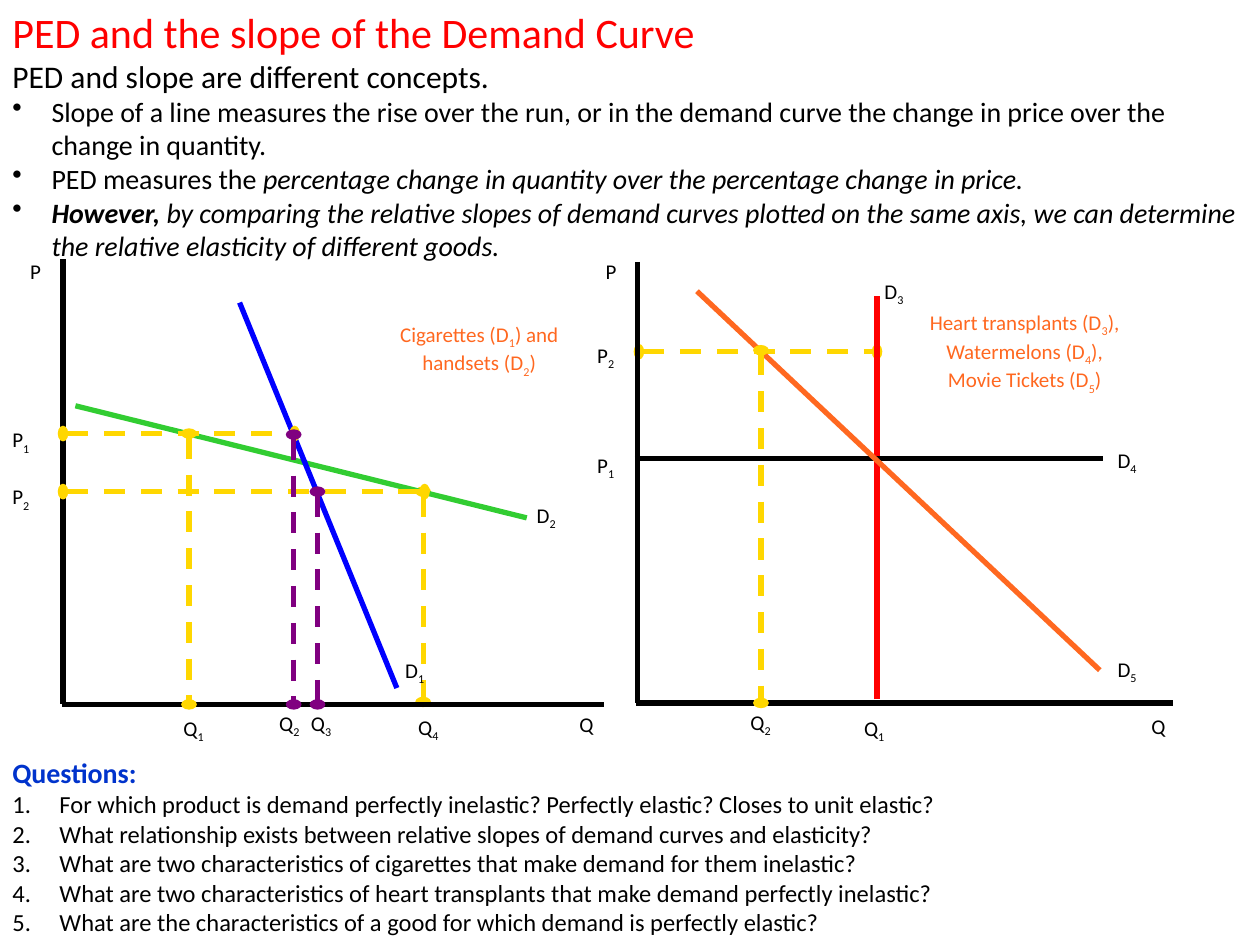
"""Build a slide on price elasticity and the slope of demand curves."""
from dataclasses import dataclass

from lxml.etree import SubElement
from pptx import Presentation
from pptx.dml.color import RGBColor
from pptx.enum.dml import MSO_LINE
from pptx.enum.shapes import MSO_CONNECTOR
from pptx.enum.text import MSO_AUTO_SIZE, PP_ALIGN
from pptx.oxml.ns import qn
from pptx.util import Cm, Pt


@dataclass(frozen=True)
class Theme:
    face: str = "Calibri"
    black: str = "000000"
    red: str = "FF0000"
    blue: str = "0000FF"
    navy: str = "0033CC"
    green: str = "32CD32"
    gold: str = "FFD700"
    purple: str = "800080"
    orange: str = "FF6820"
    title: int = 24
    lead: int = 18
    body: int = 16
    quiz: int = 14
    label: int = 12
    stroke: int = 3


T = Theme()

LEFT = dict(
    solid=[
        (1.27, 5.23, 1.27, 14.2, T.black),
        (1.24, 14.2, 12.17, 14.2, T.black),
        (1.52, 8.18, 10.62, 10.44, T.green),
        (4.83, 6.1, 8, 13.87, T.blue),
    ],
    dashed=[
        (8.53, 9.91, 8.53, 14.15, T.gold),
        (1.27, 8.74, 5.94, 8.74, T.gold),
        (3.81, 8.74, 3.81, 14.2, T.gold),
        (1.27, 9.91, 8.56, 9.91, T.gold),
        (5.92, 8.76, 5.92, 14.2, T.purple),
        (6.4, 9.91, 6.4, 14.2, T.purple),
    ],
    labels=[
        ("D_2", 10.57, 10.01), ("D_1", 7.92, 13.13),
        ("P_1", 0, 8.48), ("P_2", 0, 9.63), ("P", 0.36, 5.08),
        ("Q", 11.43, 14.22), ("Q_1", 3.45, 14.3), ("Q_2", 5.38, 14.2),
        ("Q_3", 6.02, 14.2), ("Q_4", 8.18, 14.27),
    ],
    goods=["Cigarettes (D_1) and handsets (D_2)"],
    box=(7.21, 6.35, 4.9, 1.6),
)

RIGHT = dict(
    solid=[
        (12.85, 5.28, 12.85, 14.17, T.black),
        (12.83, 14.17, 23.65, 14.17, T.black),
        (17.68, 14.1, 17.68, 5.97, T.red),
        (12.8, 9.25, 22.23, 9.25, T.black),
        (14.05, 5.87, 22.17, 13.51, T.orange),
    ],
    dashed=[
        (12.88, 7.09, 17.68, 7.09, T.gold),
        (15.34, 7.06, 15.34, 14.17, T.gold),
    ],
    labels=[
        ("D_4", 22.28, 8.89), ("D_5", 22.28, 13.11), ("D_3", 17.58, 5.49),
        ("P_1", 11.79, 8.99), ("P_2", 11.79, 6.78), ("P", 11.96, 5.08),
        ("Q", 22.96, 14.25), ("Q_1", 17.17, 14.3), ("Q_2", 14.88, 14.17),
    ],
    goods=["Heart transplants (D_3), Watermelons (D_4),", "Movie Tickets (D_5)"],
    box=(17.58, 6.12, 6.15, 1.75),
)

QUIZ = [
    "For which product is demand perfectly inelastic? Perfectly elastic? Closes to unit elastic?",
    "What relationship exists between relative slopes of demand curves and elasticity?",
    "What are two characteristics of cigarettes that make demand for them inelastic?",
    "What are two characteristics of heart transplants that make demand perfectly inelastic?",
    "What are the characteristics of a good for which demand is perfectly elastic?",
]


def add_line(shapes, x1, y1, x2, y2, hue, dashed=False):
    """Draw a plain line, or a dashed one with a dot at each end."""
    link = shapes.add_connector(
        MSO_CONNECTOR.STRAIGHT, Cm(x1), Cm(y1), Cm(x2), Cm(y2))
    link.line.color.rgb = RGBColor.from_string(hue)
    link.line.width = Pt(T.stroke)
    if dashed:
        link.line.dash_style = MSO_LINE.DASH
        stroke = link.line.color and link._element.spPr.find(qn("a:ln"))
        for end in ("a:headEnd", "a:tailEnd"):
            SubElement(stroke, qn(end), type="oval", w="med", len="sm")
    SubElement(link._element.spPr, qn("a:effectLst"))


def add_box(shapes, x, y, wide, high):
    """Add a wrapped text box and return its text frame."""
    frame = shapes.add_textbox(Cm(x), Cm(y), Cm(wide), Cm(high)).text_frame
    frame.word_wrap = True
    frame.auto_size = MSO_AUTO_SIZE.SHAPE_TO_FIT_TEXT
    return frame


def next_par(frame):
    """Return the first empty paragraph or a new one."""
    first = frame.paragraphs[0]
    return frame.add_paragraph() if first.runs else first


def style(par, size, hue, bold=None, slant=None):
    """Set the font of a whole paragraph."""
    font = par.font
    font.name, font.size, font.bold, font.italic = T.face, Pt(size), bold, slant
    font.color.rgb = RGBColor.from_string(hue)


def add_par(frame, text, size, hue, **look):
    """Add a paragraph whose underscores mark one-digit subscripts."""
    par = next_par(frame)
    head, *tails = text.split("_")
    par.add_run().text = head
    for tail in tails:
        sub = par.add_run()
        sub.text = tail[0]
        sub._r.get_or_add_rPr().set("baseline", "-25000")
        if tail[1:]:
            par.add_run().text = tail[1:]
    style(par, size, hue, **look)
    return par


def set_mark(par, indent, tag, **traits):
    """Give a paragraph a hanging bullet or number."""
    props = par._p.get_or_add_pPr()
    props.set("marL", str(Cm(indent)))
    props.set("indent", str(-Cm(indent)))
    mark = props.makeelement(qn(tag), traits)
    props.insert(0, mark)


def add_graph(slide, solid, dashed, labels, goods, box):
    """Draw one demand graph as a group."""
    shapes = slide.shapes.add_group_shape().shapes
    first, *rest = dashed
    add_line(shapes, *first, dashed=True)
    for line in solid:
        add_line(shapes, *line)
    for line in rest:
        add_line(shapes, *line, dashed=True)
    for text, x, y in labels:
        add_par(add_box(shapes, x, y, 1.5, 0.95), text, T.label, T.black)
    frame = add_box(shapes, *box)
    for text in goods:
        add_par(frame, text, T.label, T.orange).alignment = PP_ALIGN.CENTER


def add_intro(slide):
    """Write the title and the bullets on slope and elasticity."""
    frame = add_box(slide.shapes, 0, 0, 25.4, 5.46)
    add_par(frame, "PED and the slope of the Demand Curve", T.title, T.red)
    add_par(frame, "PED and slope are different concepts.", T.lead, T.black)
    points = [
        add_par(frame, "Slope of a line measures the rise over the run, or in the demand "
                "curve the change in price over the change in quantity.", T.body, T.black),
        add_par(frame, "PED measures the ", T.body, T.black),
        add_par(frame, "However, ", T.body, T.black, slant=True),
    ]
    ratio = points[1].add_run()
    ratio.text = "percentage change in quantity over the percentage change in price."
    ratio.font.italic = True
    points[2].runs[0].font.bold = True
    points[2].add_run().text = (
        "by comparing the relative slopes of demand curves plotted on the same axis, "
        "we can determine the relative elasticity of different goods.")
    for par in points:
        set_mark(par, 0.79, "a:buChar", char="•")


def add_quiz(slide):
    """Write the numbered questions."""
    frame = add_box(slide.shapes, 0, 15.11, 25.4, 3.94)
    add_par(frame, "Questions:", T.body, T.navy, bold=True)
    for text in QUIZ:
        par = add_par(frame, text, T.quiz, T.black)
        set_mark(par, 0.95, "a:buAutoNum", type="arabicPeriod")


def main():
    """Build and save the slide."""
    deck = Presentation()
    deck.slide_width, deck.slide_height = Cm(25.4), Cm(19.05)
    slide = deck.slides.add_slide(deck.slide_layouts[6])
    for graph in (LEFT, RIGHT):
        add_graph(slide, **graph)
    add_intro(slide)
    add_quiz(slide)
    deck.save("out.pptx")


if __name__ == "__main__":
    main()
